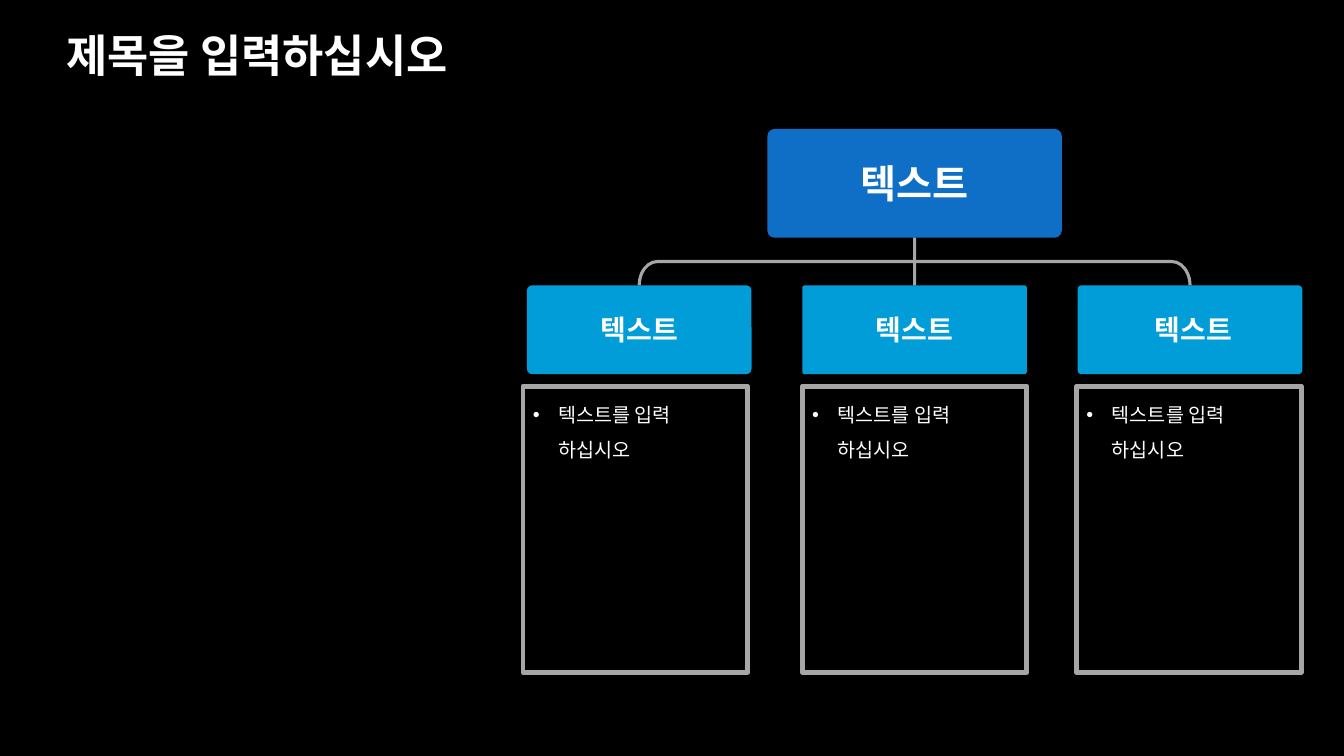
from lxml.etree import SubElement
from pptx import Presentation
from pptx.dml.color import RGBColor
from pptx.enum.shapes import MSO_CONNECTOR, MSO_SHAPE
from pptx.enum.text import MSO_ANCHOR, PP_ALIGN
from pptx.oxml.ns import qn
from pptx.util import Cm, Pt

COLORS = {
    "background": "000000",
    "text": "FFFFFF",
    "line": "A6A6A6",
    "root": "0F6FC6",
    "branch": "009DD9",
}


def add_box(kind, left, top, width, height, fill=None, line_width=None):
    shape = slide.shapes.add_shape(kind, Cm(left), Cm(top), Cm(width), Cm(height))
    shape.shadow.inherit = False
    if fill:
        shape.fill.solid()
        shape.fill.fore_color.rgb = RGBColor.from_string(COLORS[fill])
    else:
        shape.fill.background()
    if line_width:
        shape.line.color.rgb = RGBColor.from_string(COLORS["line"])
        shape.line.width = Pt(line_width)
    else:
        shape.line.fill.background()
    return shape


def write(shape, text, size, bold, align, anchor):
    frame = shape.text_frame
    frame.word_wrap = True
    frame.vertical_anchor = anchor
    paragraph = frame.paragraphs[0]
    paragraph.alignment = align
    run = paragraph.add_run()
    run.text = text
    run.font.name = "Calibri"
    run.font.size = Pt(size)
    run.font.bold = bold
    run.font.color.rgb = RGBColor.from_string(COLORS["text"])
    return paragraph


presentation = Presentation()
presentation.slide_width = Cm(33.87)
presentation.slide_height = Cm(19.05)
slide = presentation.slides.add_slide(presentation.slide_layouts[5])
slide.background.fill.solid()
slide.background.fill.fore_color.rgb = RGBColor.from_string(COLORS["background"])

title = slide.shapes.title
title.left, title.top, title.width, title.height = Cm(1.42), Cm(0.56), Cm(31.01), Cm(1.8)
heading = write(title, "제목을 입력하십시오", 32, True, PP_ALIGN.LEFT, MSO_ANCHOR.MIDDLE)
heading.line_spacing = 0.9

branch_left, branch_top, branch_width, branch_step = 13.28, 7.19, 5.66, 6.94
center = branch_left + branch_step + branch_width / 2
bracket_depth, bracket_length = 0.6, 2 * branch_step
bracket = add_box(
    MSO_SHAPE.RIGHT_BRACKET,
    center - bracket_depth / 2,
    branch_top - bracket_depth / 2 - bracket_length / 2,
    bracket_depth,
    bracket_length,
    line_width=2.25,
)
bracket.rotation = 270
bracket.adjustments[0] = 0.76

root_width = 7.42
root = add_box(MSO_SHAPE.ROUNDED_RECTANGLE, center - root_width / 2, 3.25, root_width, 2.74, "root")
root.adjustments[0] = 0.066
write(root, "텍스트", 28, True, PP_ALIGN.CENTER, MSO_ANCHOR.MIDDLE)

branches = []
for index, (rounding, label_shift) in enumerate([(0.06, 0), (0.029, 0), (0.044, 0.18)]):
    left = branch_left + index * branch_step
    branch = add_box(MSO_SHAPE.ROUNDED_RECTANGLE, left, branch_top, branch_width, 2.24, "branch")
    branch.adjustments[0] = rounding
    branch.text_frame.margin_left = Cm(0.25 + label_shift)
    write(branch, "텍스트", 20, True, PP_ALIGN.CENTER, MSO_ANCHOR.MIDDLE)
    branches.append(branch)

stem = slide.shapes.add_connector(MSO_CONNECTOR.STRAIGHT, 0, 0, 0, 0)
stem.begin_connect(root, 2)
stem.end_connect(branches[1], 0)
stem.line.color.rgb = RGBColor.from_string(COLORS["line"])
stem.line.width = Pt(2.25)
SubElement(stem.element.spPr, qn("a:effectLst"))

for left in (13.18, 20.22, 27.13):
    panel = add_box(MSO_SHAPE.RECTANGLE, left, 9.73, branch_width, 7.21, line_width=3.5)
    item = write(panel, "텍스트를 입력 하십시오", 14, False, PP_ALIGN.LEFT, MSO_ANCHOR.TOP)
    item.line_spacing = 1.5
    item.space_before = Pt(10)
    properties = item._p.get_or_add_pPr()
    properties.set("marL", str(Cm(0.64)))
    properties.set("indent", str(-Cm(0.64)))
    SubElement(properties, qn("a:buFont")).set("typeface", "Arial")
    SubElement(properties, qn("a:buChar")).set("char", "•")

presentation.save("out.pptx")
